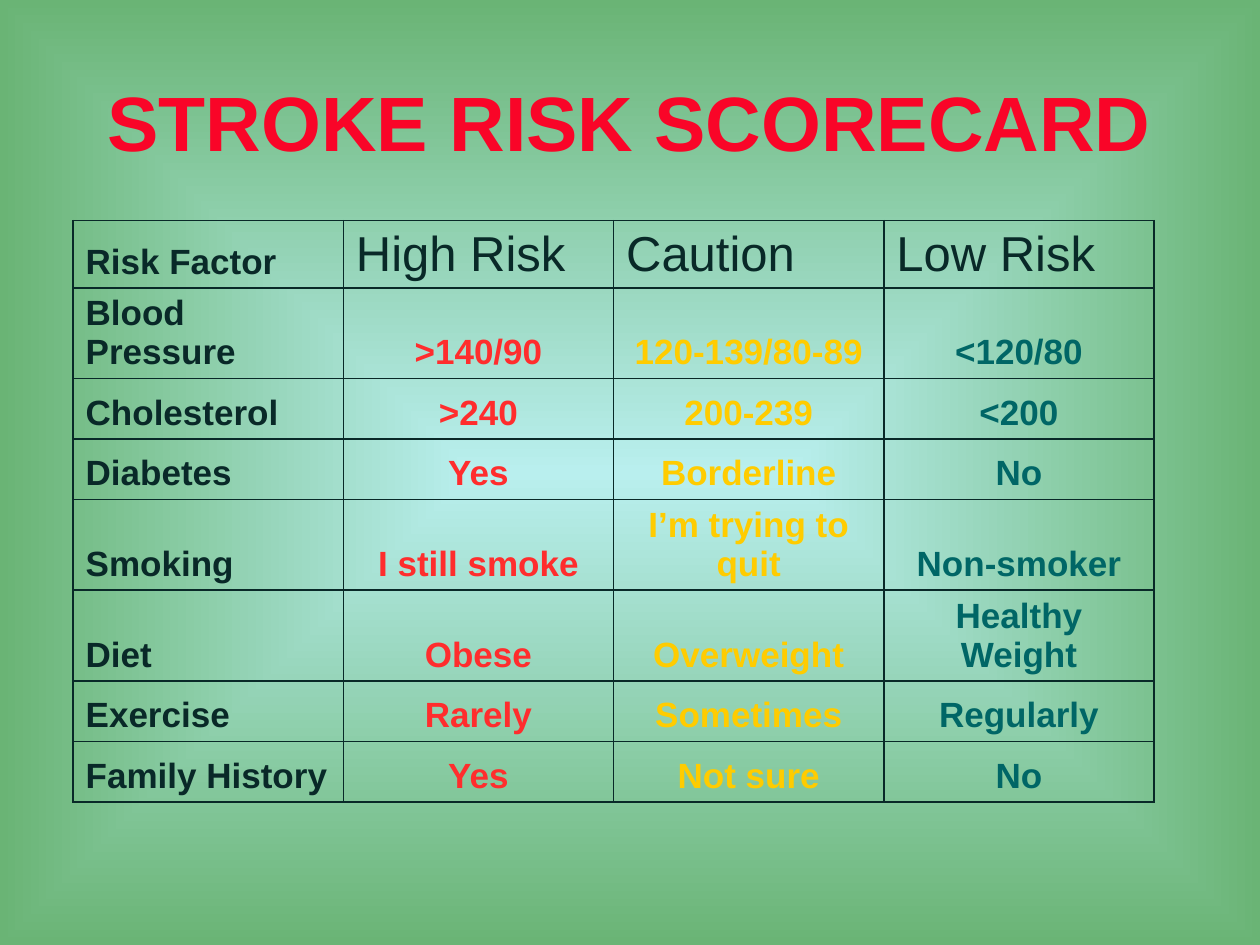
from lxml import etree
from pptx import Presentation
from pptx.dml.color import RGBColor
from pptx.enum import text
from pptx.oxml.ns import qn
from pptx.util import Inches, Pt

COLORS = {
    "centre": "B9EFEE", "edge": "6AB475", "title": "F90528", "ink": "092928",
    "high": "FF2D2D", "caution": "FFCC00", "low": "006666",
}
SCORECARD = [
    ("Risk Factor", "High Risk", "Caution", "Low Risk"),
    ("Blood Pressure", ">140/90", "120-139/80-89", "<120/80"),
    ("Cholesterol", ">240", "200-239", "<200"),
    ("Diabetes", "Yes", "Borderline", "No"),
    ("Smoking", "I still smoke", "I’m trying to quit", "Non-smoker"),
    ("Diet", "Obese", "Overweight", "Healthy Weight"),
    ("Exercise", "Rarely", "Sometimes", "Regularly"),
    ("Family History", "Yes", "Not sure", "No"),
]
COLUMN_COLORS = ("ink", "high", "caution", "low")


def set_font(paragraph, size, color, bold):
    font = paragraph.font
    font.name = "Arial"
    font.size = Pt(size)
    font.bold = bold
    font.color.rgb = RGBColor.from_string(COLORS[color])


def add_borders(cell):
    properties = cell._tc.get_or_add_tcPr()
    for side in ("lnL", "lnR", "lnT", "lnB"):
        line = etree.SubElement(properties, qn(f"a:{side}"), w=str(Pt(1)))
        fill = etree.SubElement(line, qn("a:solidFill"))
        etree.SubElement(fill, qn("a:srgbClr"), val=COLORS["ink"])


prs = Presentation()
prs.slide_width, prs.slide_height = Inches(10), Inches(7.5)
slide = prs.slides.add_slide(prs.slide_layouts[5])

# Background glowing from the centre
background = slide.background.fill
background.gradient()
for stop, position, color in zip(background.gradient_stops, (0, 1), ("centre", "edge")):
    stop.position = position
    stop.color.rgb = RGBColor.from_string(COLORS[color])
gradient = slide._element.find(".//" + qn("a:gradFill"))
gradient.remove(gradient.find(qn("a:lin")))
glow = etree.SubElement(gradient, qn("a:path"))
glow.set("path", "shape")
etree.SubElement(glow, qn("a:fillToRect"), l="50000", t="50000", r="50000", b="50000")

# Title
title = slide.shapes.title
title.left, title.top = Inches(0.5), Inches(0.5)
title.width, title.height = Inches(9), Inches(0.92)
title.text_frame.text = "STROKE RISK SCORECARD"
title.text_frame.vertical_anchor = text.MSO_ANCHOR.MIDDLE
title.text_frame.paragraphs[0].alignment = text.PP_ALIGN.CENTER
set_font(title.text_frame.paragraphs[0], 44, "title", True)

# Scorecard
scorecard = slide.shapes.add_table(
    len(SCORECARD), len(COLUMN_COLORS),
    Inches(0.58), Inches(1.75), Inches(8.58), Inches(3.84),
).table
scorecard.first_row = scorecard.horz_banding = False
for row_index, entries in enumerate(SCORECARD):
    scorecard.rows[row_index].height = Inches(0.48)
    for column_index, entry in enumerate(entries):
        cell = scorecard.cell(row_index, column_index)
        add_borders(cell)
        cell.fill.background()
        cell.vertical_anchor = text.MSO_ANCHOR.BOTTOM
        cell.text = entry
        paragraph = cell.text_frame.paragraphs[0]
        if column_index == 0:
            set_font(paragraph, 20, "ink", True)
        elif row_index == 0:
            set_font(paragraph, 28, "ink", False)
        else:
            set_font(paragraph, 20, COLUMN_COLORS[column_index], True)
            paragraph.alignment = text.PP_ALIGN.CENTER

prs.save("out.pptx")
